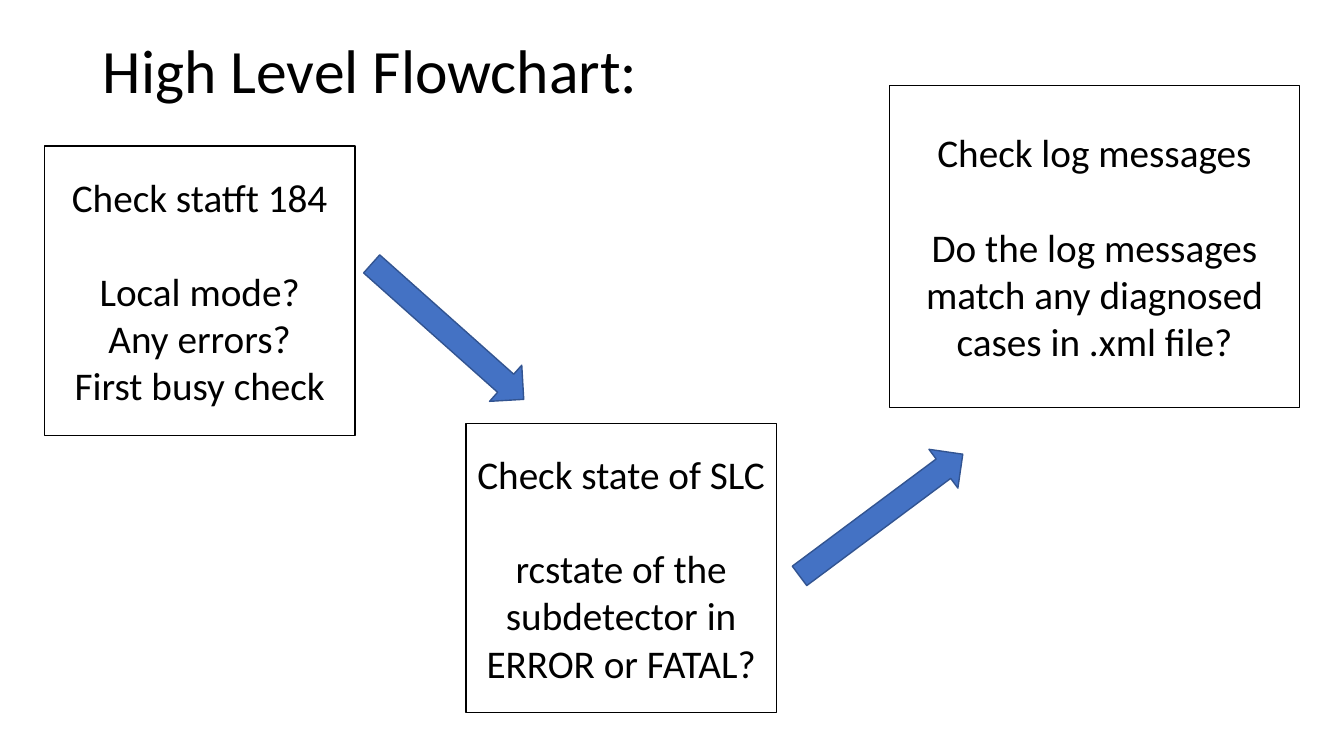
import pptx
import pptx.dml.color
import pptx.enum.shapes
import pptx.enum.text
import pptx.util

PX = 9144
FONT = "Calibri"
COLORS = {"text": "000000", "outline": "000000", "arrow": "4472C4", "arrow_edge": "325491"}
STEP_SIZE = (308, 287)
ARROW_SIZE = (202, 48)

STEPS = [
    ((44, 145, *STEP_SIZE), "Check statft 184",
     ["Local mode?", "Any errors?", "First busy check"]),
    ((462, 420, *STEP_SIZE), "Check state of SLC",
     ["rcstate of the subdetector in ERROR or FATAL?"]),
    ((882, 85, 407, 319), "Check log messages",
     ["Do the log messages match any diagnosed cases in .xml file?"]),
]
ARROWS = [((343, 305, *ARROW_SIZE), 41.7), ((773, 487, *ARROW_SIZE), 323.3)]


def to_emu(box):
    return [pptx.util.Emu(length * PX) for length in box]


def color(name):
    return pptx.dml.color.RGBColor.from_string(COLORS[name])


def add_span(para, text, size):
    span = para.add_run()
    span.text = text
    span.font.name = FONT
    span.font.size = pptx.util.Pt(size)
    span.font.color.rgb = color("text")


def add_outlined_shape(page, kind, box, line_color):
    shape = page.shapes.add_shape(kind, *to_emu(box))
    shape.shadow.inherit = False
    shape.line.color.rgb = color(line_color)
    shape.line.width = pptx.util.Pt(1)
    return shape


def place_title(page, box, text):
    title = page.shapes.title
    title.left, title.top, title.width, title.height = to_emu(box)
    frame = title.text_frame
    frame.auto_size = pptx.enum.text.MSO_AUTO_SIZE.NONE
    frame.vertical_anchor = pptx.enum.text.MSO_ANCHOR.MIDDLE
    para = frame.paragraphs[0]
    para.alignment = pptx.enum.text.PP_ALIGN.LEFT
    para.line_spacing = 0.9
    add_span(para, text, 44)


def add_step(page, box, heading, questions):
    step = add_outlined_shape(page, pptx.enum.shapes.MSO_SHAPE.RECTANGLE, box, "outline")
    step.fill.background()
    frame = step.text_frame
    frame.word_wrap = True
    frame.vertical_anchor = pptx.enum.text.MSO_ANCHOR.MIDDLE
    for index, text in enumerate([heading, *questions]):
        para = frame.add_paragraph() if index else frame.paragraphs[0]
        para.alignment = pptx.enum.text.PP_ALIGN.CENTER
        add_span(para, text, 28)
    frame.paragraphs[0].space_after = pptx.util.Pt(34)


def add_arrow(page, box, angle):
    arrow = add_outlined_shape(page, pptx.enum.shapes.MSO_SHAPE.RIGHT_ARROW, box, "arrow_edge")
    arrow.fill.solid()
    arrow.fill.fore_color.rgb = color("arrow")
    arrow.rotation = angle


def build_flowchart(deck):
    page = deck.slides.add_slide(deck.slide_layouts.get_by_name("Title Only"))
    place_title(page, (92, 0, 1150, 145), "High Level Flowchart:")
    for box, heading, questions in STEPS:
        add_step(page, box, heading, questions)
    for box, angle in ARROWS:
        add_arrow(page, box, angle)


def main():
    deck = pptx.Presentation()
    deck.slide_width, deck.slide_height = to_emu((1333, 750))
    build_flowchart(deck)
    deck.save("out.pptx")


if __name__ == "__main__":
    main()
